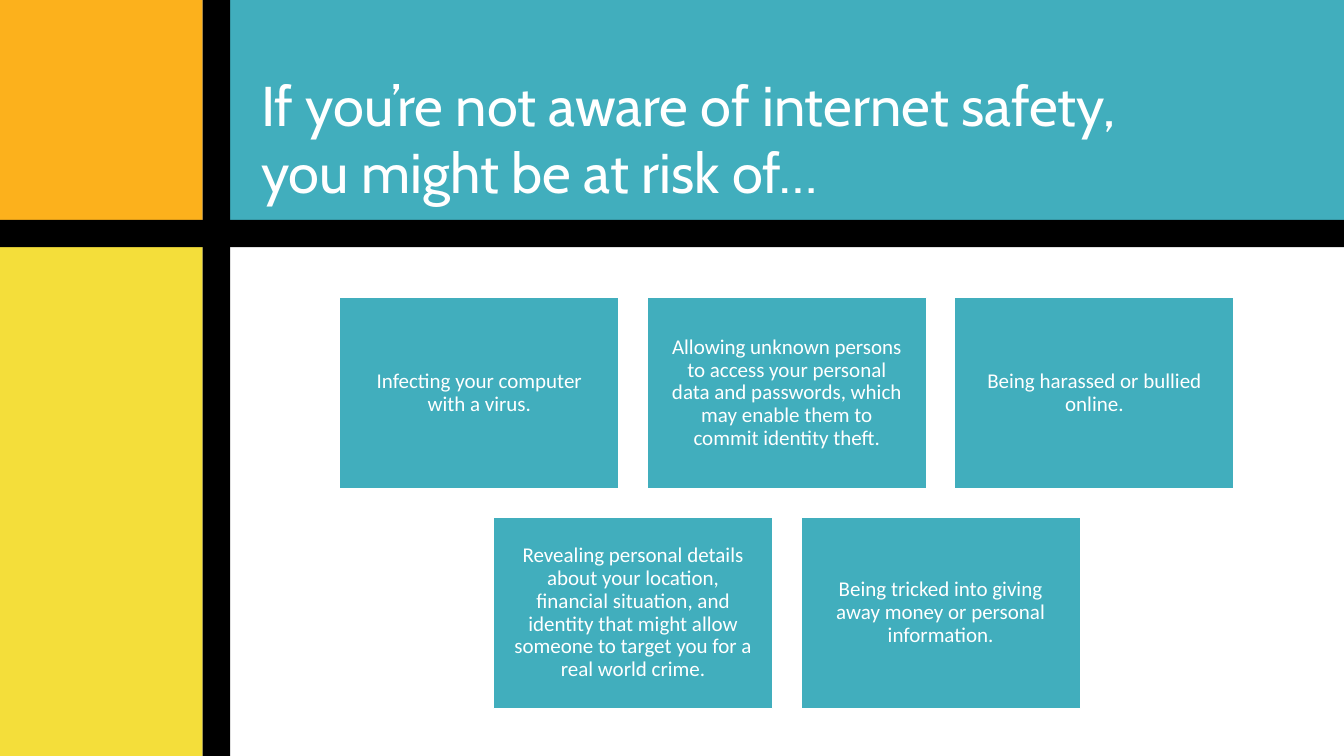
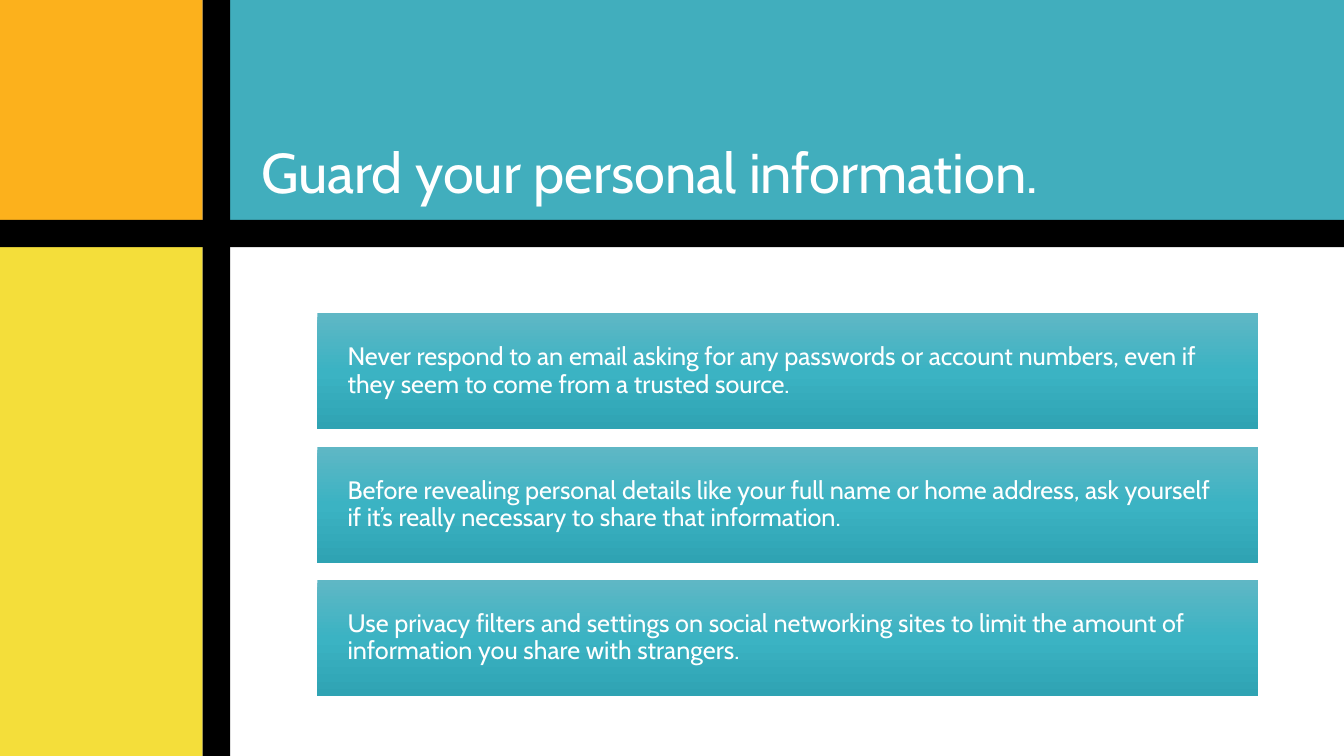
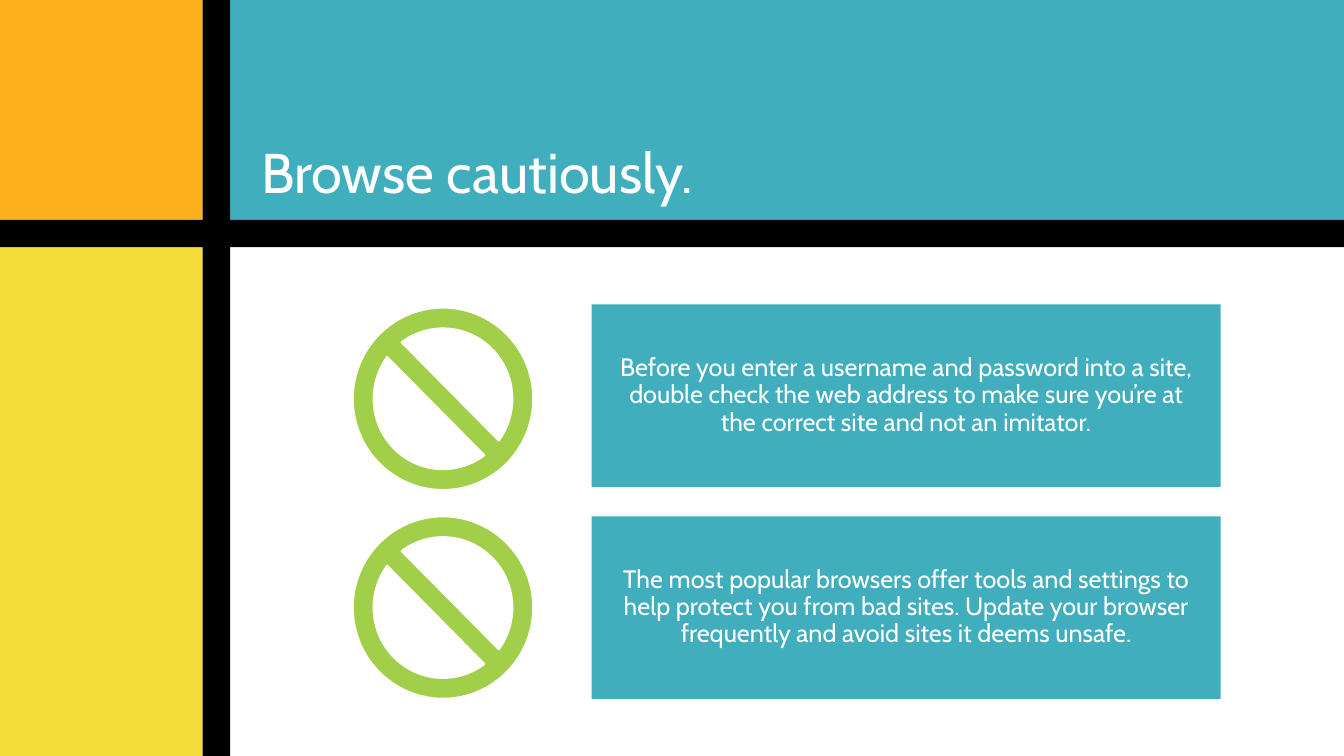
from copy import deepcopy

from pptx import Presentation
from pptx.dml.color import RGBColor as RGB
from pptx.enum.shapes import MSO_SHAPE as SHAPE
from pptx.enum.text import MSO_ANCHOR as ANCHOR, MSO_AUTO_SIZE as AUTO, PP_ALIGN as ALIGN
from pptx.oxml.ns import qn
from pptx.util import Cm, Pt

COLORS = {
    "teal": "41AEBD",
    "orange": "FCB11C",
    "yellow": "F4DE3A",
    "green": "A2CF49",
    "black": "000000",
    "white": "FFFFFF",
    "grad_top": "5FB7C5",
    "grad_mid": "3BB3C3",
    "grad_end": "2FA3B3",
}
C = {name: RGB.from_string(value) for name, value in COLORS.items()}

W, H = 33.87, 19.05
SIDE_W, TOP_H, BAR = 5.11, 5.54, 0.69
MAIN_X, MAIN_Y = SIDE_W + BAR, TOP_H + BAR


def add_box(s, x, y, w, h, fill, line=0, kind=SHAPE.RECTANGLE):
    sp = s.shapes.add_shape(kind, Cm(x), Cm(y), Cm(w), Cm(h))
    sp.shadow.inherit = False
    sp.fill.solid()
    sp.fill.fore_color.rgb = C[fill]
    if line:
        sp.line.color.rgb = C["white"]
        sp.line.width = Pt(line)
    else:
        sp.line.fill.background()
    return sp


def write(sp, text, size, font="Cabin", align=ALIGN.LEFT, spacing=0.9, **frame):
    tf = sp.text_frame
    tf.text = text
    for k, v in frame.items():
        setattr(tf, k, v)
    p = tf.paragraphs[0]
    p.alignment = align
    p.line_spacing = spacing
    for k, v in {"name": font, "size": Pt(size)}.items():
        setattr(p.font, k, v)
    for r in p.runs:
        r.font.color.rgb = C["white"]


def_frame = {"word_wrap": True, "vertical_anchor": ANCHOR.MIDDLE,
             "margin_top": Cm(0.25), "margin_bottom": Cm(0.25)}
card_frame = {**def_frame, "margin_left": Cm(0.51), "margin_right": Cm(0.51)}
row_frame = {**def_frame, "margin_left": Cm(0.76), "margin_right": Cm(0.76)}
title_frame = {"word_wrap": True, "vertical_anchor": ANCHOR.BOTTOM, "auto_size": AUTO.NONE,
               "margin_left": Cm(0.76), "margin_right": Cm(0.76),
               "margin_top": Cm(0.38), "margin_bottom": Cm(0.38)}

prs = Presentation()
prs.slide_width, prs.slide_height = Cm(W), Cm(H)
layout = prs.slide_layouts[5]

title_box = {"left": Cm(5.82), "top": Cm(1.35), "width": Cm(W - 5.82), "height": Cm(TOP_H - 1.35)}
for k, v in title_box.items():
    setattr(layout.placeholders[0], k, v)

titles = [
    "If you’re not aware of internet safety,\vyou might be at risk of…",
    "Guard your personal information.",
    "Browse cautiously.",
]
for title in titles:
    s = prs.slides.add_slide(layout)
    write(s.shapes.title, title, 40, spacing=1.0, **title_frame)
risks, guard, browse = prs.slides

bands = [
    (MAIN_X, 0, W - MAIN_X, TOP_H, "teal"),
    (0, 0, SIDE_W, TOP_H, "orange"),
    (0, MAIN_Y, SIDE_W, H - MAIN_Y, "yellow"),
    (0, TOP_H, W, BAR, "black"),
    (SIDE_W, 0, BAR, H, "black"),
]
for i, band in enumerate(bands):
    el = add_box(risks, *band).element
    el.nvSpPr.cNvPr.set("id", str(20 + i))
    layout.element.cSld.spTree.insert(2 + i, el)

card_w, card_h, gap = 7.04, 4.83, 0.71
risk_rows = [
    [
        "Infecting your computer with a virus.",
        "Allowing unknown persons to access your personal data and passwords, "
        "which may enable them to commit identity theft.",
        "Being harassed or bullied online.",
    ],
    [
        "Revealing personal details about your location, financial situation, and identity "
        "that might allow someone to target you for a real world crime.",
        "Being tricked into giving away money or personal information.",
    ],
]
for i, row in enumerate(risk_rows):
    x0 = 8.56 + (3 - len(row)) * (card_w + gap) / 2
    for j, text in enumerate(row):
        sp = add_box(risks, x0 + j * (card_w + gap), 7.49 + i * (card_h + gap),
                     card_w, card_h, "teal", line=1)
        write(sp, text, 15, font="Calibri", align=ALIGN.CENTER, **card_frame)

guard_tips = [
    "Never respond to an email asking for any passwords or account numbers, "
    "even if they seem to come from a trusted source.",
    "Before revealing personal details like your full name or home address, "
    "ask yourself if it’s really necessary to share that information.",
    "Use privacy filters and settings on social networking sites "
    "to limit the amount of information you share with strangers.",
]
for i, text in enumerate(guard_tips):
    sp = add_box(guard, 8, 7.9 + i * 3.36, 23.7, 2.92, "teal")
    sp.fill.gradient()
    sp.fill.gradient_angle = 270
    stops = sp.element.spPr.find(qn("a:gradFill")).find(qn("a:gsLst"))
    stops.append(deepcopy(stops[0]))
    for stop, pos, name in zip(sp.fill.gradient_stops, (0, 0.5, 1), ("grad_top", "grad_mid", "grad_end")):
        stop.position = pos
        stop.color.rgb = C[name]
    write(sp, text, 18, **row_frame)

browse_tips = [
    "Before you enter a username and password into a site, double check the web address "
    "to make sure you’re at the correct site and not an imitator.",
    "The most popular browsers offer tools and settings to help protect you from bad sites. "
    "Update your browser frequently and avoid sites it deems unsafe.",
]
for i, text in enumerate(browse_tips):
    sp = add_box(browse, 14.91, 7.67 + i * 5.34, 15.85, 4.6, "teal")
    write(sp, text, 18, align=ALIGN.CENTER, **card_frame)
    sign = add_box(browse, 8.89, 7.75 + i * 5.26, 4.55, 4.6, "green", line=1.5, kind=SHAPE.NO_SYMBOL)
    sign.adjustments[0] = 0.116

prs.save("out.pptx")
